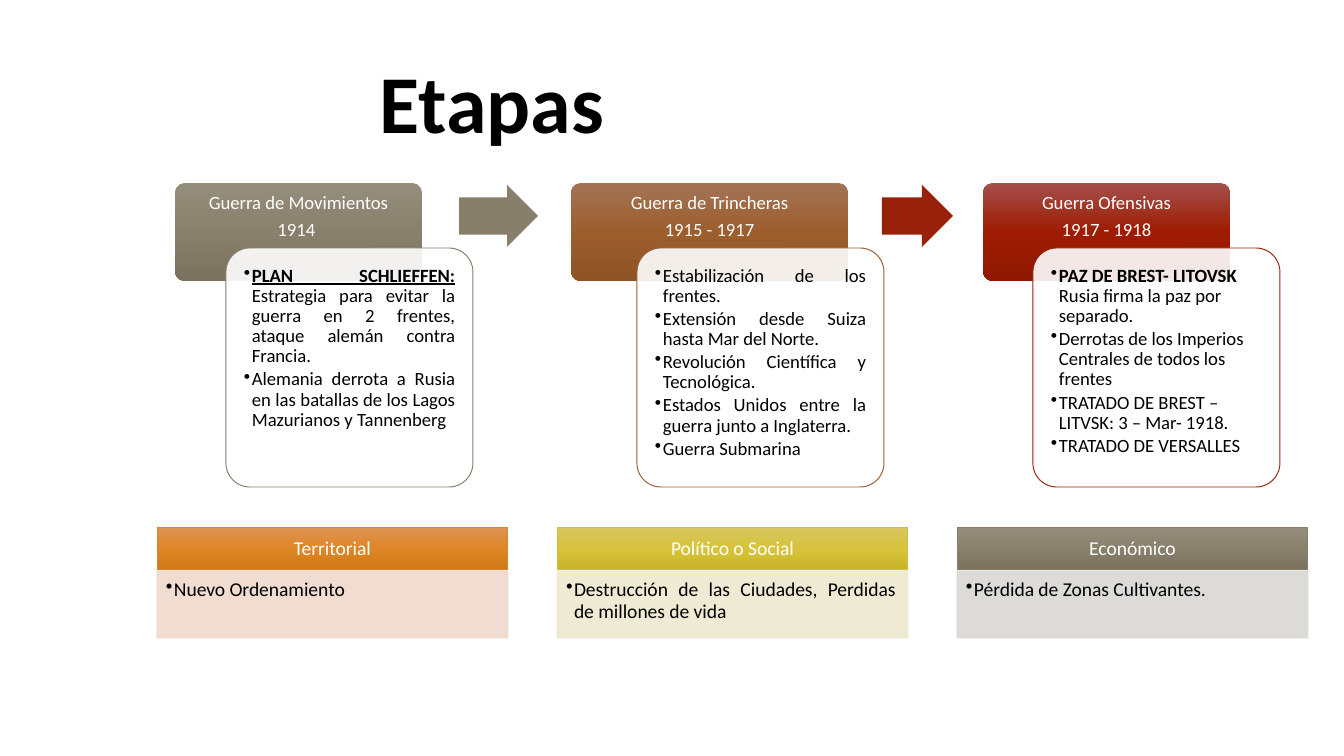
"""Build the slide of war stages and their consequences."""
import copy

import pptx
import pptx.dml.color
import pptx.enum.shapes
import pptx.enum.text
import pptx.oxml.ns
import pptx.oxml.xmlchemy
import pptx.util
from lxml import etree

SHAPE = pptx.enum.shapes.MSO_SHAPE
ALIGN = pptx.enum.text.PP_ALIGN
ANCHOR = pptx.enum.text.MSO_ANCHOR
qn = pptx.oxml.ns.qn

THEME = {
    "font": "Calibri", "title": 44, "stage": 10, "effect": 10.5,
    "dark": "000000", "light": "FFFFFF",
    "stone": ("958E7D", "88806B", "7A725E"), "stone_line": "877F6C",
    "brown": ("A47356", "9C5E2D", "8F5324"), "brown_line": "975E32",
    "red": ("A44F4B", "9E1C02", "8E1800"), "red_line": "972109",
    "orange": ("DC9355", "DE8625", "CF7817"), "orange_line": "D6862D",
    "yellow": ("D6C65F", "D7C339", "C7B42A"), "yellow_line": "D0BE40",
    "orange_tint": "F0D9CD", "yellow_tint": "EEE8CF", "stone_tint": "D9D8D4",
}

TITLE = "Etapas"
STAGES = [
    {"name": ["Guerra de Movimientos", "1914 "], "hue": "stone", "align": ALIGN.JUSTIFY,
     "head": (175, 247), "card": 226, "lead": "PLAN SCHLIEFFEN:", "underline": True,
     "points": [" Estrategia para evitar la guerra en 2 frentes, ataque alemán contra Francia.",
                "Alemania derrota a Rusia en las batallas de los Lagos Mazurianos y Tannenberg"]},
    {"name": ["Guerra de Trincheras", "1915 - 1917"], "hue": "brown", "align": ALIGN.JUSTIFY,
     "head": (571, 277), "card": 637, "arrow": (459, 79, "stone_line"),
     "points": ["Estabilización de los frentes.",
                "Extensión desde Suiza hasta Mar del Norte.",
                "Revolución Científica y Tecnológica.",
                "Estados Unidos entre la guerra junto a Inglaterra.",
                "Guerra Submarina"]},
    {"name": ["Guerra Ofensivas", "1917 - 1918"], "hue": "red", "align": ALIGN.LEFT,
     "head": (983, 247), "card": 1033, "arrow": (882, 71, "red_line"),
     "lead": "PAZ DE BREST- LITOVSK ", "underline": False,
     "points": ["Rusia firma la paz por separado.",
                "Derrotas de los Imperios Centrales de todos los frentes",
                "TRATADO DE BREST – LITVSK: 3 – Mar- 1918.",
                "TRATADO DE VERSALLES"]},
]
EFFECTS = [
    ("Territorial", "Nuevo Ordenamiento", "orange", ALIGN.JUSTIFY),
    ("Político o Social", "Destrucción de las Ciudades, Perdidas de millones de vida",
     "yellow", ALIGN.JUSTIFY),
    ("Económico", "Pérdida de Zonas Cultivantes.", "stone", ALIGN.LEFT),
]


def px(n):
    return pptx.util.Emu(round(n * 914400 / 134.4))


def rgb(name):
    return pptx.dml.color.RGBColor.from_string(THEME[name])


def set_alpha(fill_parent, percent):
    color = fill_parent.find(qn("a:solidFill"))[0]
    etree.SubElement(color, qn("a:alpha")).set("val", str(percent * 1000))


def add_box(s, kind, box, fill, line=None, alpha=None, line_alpha=None):
    sp = s.shapes.add_shape(kind, *map(px, box))
    sp.shadow.inherit = False
    if isinstance(THEME[fill], tuple):
        sp.fill.gradient()
        sp.fill.gradient_angle = 270
        stops = sp._element.spPr.find(".//" + qn("a:gsLst"))
        stops.insert(1, copy.deepcopy(stops[0]))
        for stop, pos, color in zip(sp.fill.gradient_stops, (0, 0.5, 1), THEME[fill]):
            stop.position = pos
            stop.color.rgb = pptx.dml.color.RGBColor.from_string(color)
    else:
        sp.fill.solid()
        sp.fill.fore_color.rgb = rgb(fill)
    if alpha:
        set_alpha(sp._element.spPr, alpha)
    if line:
        sp.line.color.rgb = rgb(line)
        sp.line.width = pptx.util.Pt(0.5)
        if line_alpha:
            set_alpha(sp._element.spPr.find(qn("a:ln")), line_alpha)
    else:
        sp.line.fill.background()
    return sp


def style(p, size, color, align, after=0, bold=None):
    p.alignment = align
    p.line_spacing = 0.9
    p.space_before = pptx.util.Pt(0)
    p.space_after = pptx.util.Pt(after)
    for r in p.runs:
        r.font.name = THEME["font"]
        r.font.size = pptx.util.Pt(THEME[size])
        r.font.color.rgb = rgb(color)
        if bold is not None:
            r.font.bold = bold


def write(sp, lines, size, color, align, insets, after, anchor=ANCHOR.TOP, bullets=False):
    tf = sp.text_frame
    tf.word_wrap = True
    tf.vertical_anchor = anchor
    tf.margin_left, tf.margin_top, tf.margin_right, tf.margin_bottom = map(px, insets)
    tf.text = "\n".join(lines)
    for p in tf.paragraphs:
        if bullets:
            p.level = 1
            pPr = p._p.get_or_add_pPr()
            pPr.set("marL", str(px(8)))
            pPr.set("indent", str(-px(8)))
            etree.SubElement(pPr, qn("a:buChar")).set("char", "•")
        style(p, size, color, align, after)
    return tf


def add_stage(s, stage):
    hue = stage["hue"]
    if "arrow" in stage:
        left, width, color = stage["arrow"]
        arrow = add_box(s, SHAPE.RIGHT_ARROW, (left, 185, width, 62), color)
        arrow.adjustments[0], arrow.adjustments[1] = 0.6, 0.5
    left, width = stage["head"]
    head = add_box(s, SHAPE.ROUNDED_RECTANGLE, (left, 183, width, 98), hue)
    head.adjustments[0] = 0.1
    write(head, stage["name"], "stage", "light", ALIGN.CENTER, (8, 8, 8, 5), 3.5)
    card = add_box(s, SHAPE.ROUNDED_RECTANGLE, (stage["card"], 248, 247, 239),
                   "light", hue + "_line", alpha=90)
    card.adjustments[0] = 0.1
    lead = stage.get("lead", "")
    lines = [lead or stage["points"][0]] + stage["points"][1:]
    tf = write(card, lines, "stage", "dark", stage["align"], (11, 11, 11, 11), 1.5, bullets=True)
    if lead:
        p = tf.paragraphs[0]
        p.add_run().text = stage["points"][0]
        style(p, "stage", "dark", stage["align"], 1.5)
        p.runs[0].font.bold = True
        p.runs[0].font.underline = stage["underline"]


def add_effect(s, i, name, point, hue, align):
    left = 157 + 400 * i
    head = add_box(s, SHAPE.RECTANGLE, (left, 528, 351, 42), hue, hue + "_line")
    write(head, [name], "effect", "light", ALIGN.CENTER, (12, 7, 12, 7), 0, ANCHOR.MIDDLE)
    tint = hue + "_tint"
    body = add_box(s, SHAPE.RECTANGLE, (left, 571, 351, 67), tint, tint, 90, 90)
    write(body, [point], "effect", "dark", align, (9, 9, 12, 13), 0, bullets=True)


def main():
    prs = pptx.Presentation()
    prs.slide_width, prs.slide_height = px(1344), px(756)
    s = prs.slides.add_slide(prs.slide_layouts[5])
    title = s.shapes.title
    title.left, title.top, title.width, title.height = map(px, (366, 48, 911, 117))
    title.text_frame.text = TITLE
    title.text_frame.vertical_anchor = ANCHOR.MIDDLE
    style(title.text_frame.paragraphs[0], "title", "dark", ALIGN.LEFT, bold=True)
    for stage in STAGES:
        add_stage(s, stage)
    for i, effect in enumerate(EFFECTS):
        add_effect(s, i, *effect)
    prs.save("out.pptx")


if __name__ == "__main__":
    main()
